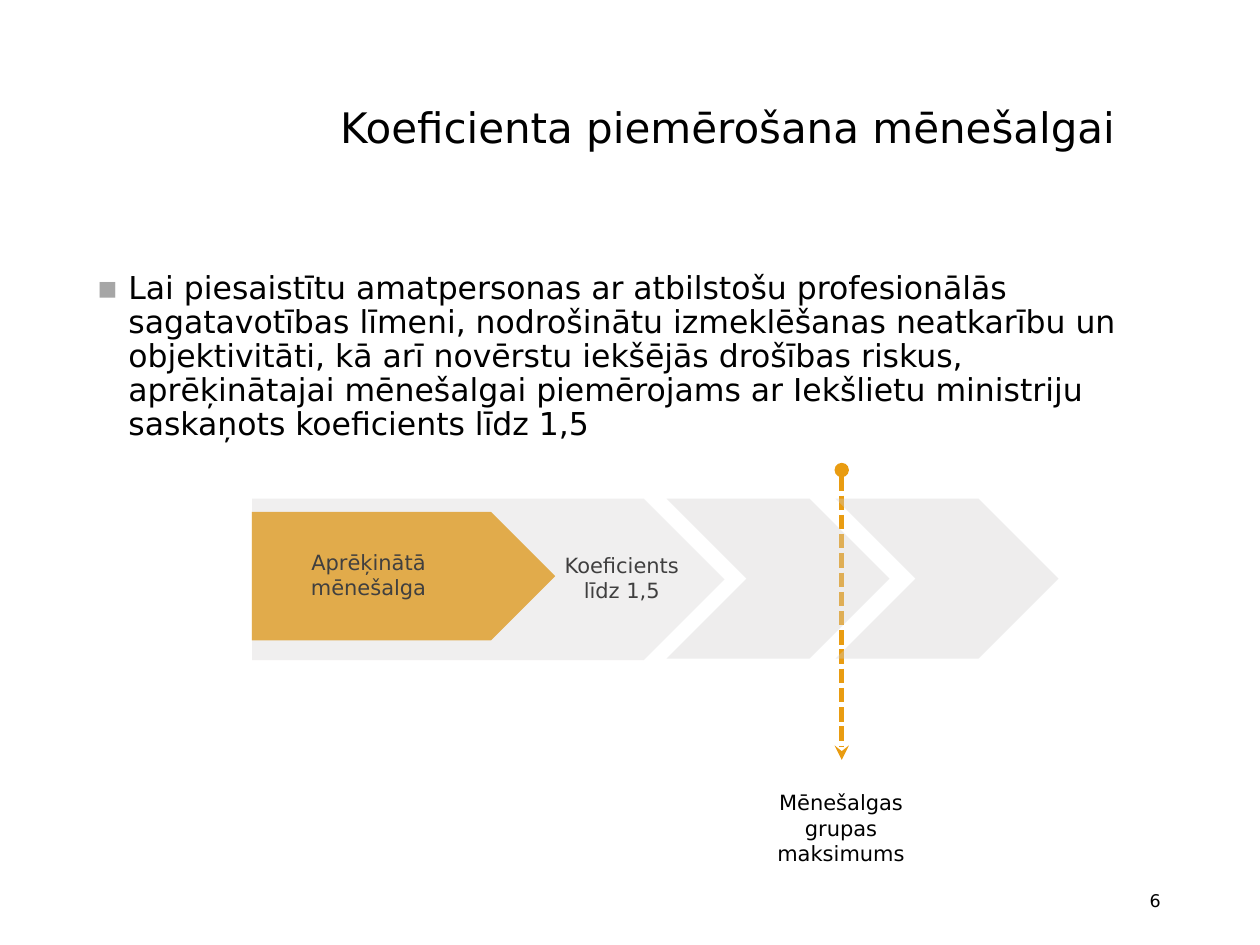
from lxml import etree
from pptx import Presentation
from pptx import util as u
from pptx.dml import color as c
from pptx.enum import dml, shapes, text
from pptx.oxml import ns

COLORS = {"ink": "000000", "amber": "E99C11", "grey": "D0CECE", "bullet": "A6A6A6"}


def apply(target, values):
    for name, value in values.items():
        setattr(target, name, value)


def add_element(parent, tag, **attributes):
    return etree.SubElement(parent, ns.qn(tag), attributes)


class SlideStyle:
    font = "DejaVu Sans"

    def __init__(self, slide):
        self.slide = slide

    def color(self, name):
        return c.RGBColor.from_string(COLORS[name])

    def place(self, box, left, top, width, height):
        apply(box, {"left": u.Pt(left), "top": u.Pt(top),
                    "width": u.Pt(width), "height": u.Pt(height)})

    def fill_text(self, box, words, size, frame, layout, bullet=None):
        apply(box.text_frame, {"word_wrap": True, **frame})
        para = box.text_frame.paragraphs[0]
        if bullet:
            props = para._p.get_or_add_pPr()
            props.set("marL", str(u.Pt(18)))
            props.set("indent", str(u.Pt(-18)))
            tint = add_element(props, "a:buClr")
            add_element(tint, "a:srgbClr", val=COLORS["bullet"])
            add_element(props, "a:buFont", typeface=self.font)
            add_element(props, "a:buChar", char=bullet)
        apply(para, {"space_before": u.Pt(0), **layout})
        span = para.add_run()
        span.text = words
        apply(span.font, {"name": self.font, "size": u.Pt(size)})
        span.font.color.rgb = self.color("ink")

    def placeholder(self, index, area, words, size, anchor, bullet=None):
        box = self.slide.placeholders[index]
        self.place(box, *area)
        frame = {"vertical_anchor": anchor, "auto_size": text.MSO_AUTO_SIZE.NONE}
        layout = {"alignment": text.PP_ALIGN.LEFT, "line_spacing": 0.9}
        self.fill_text(box, words, size, frame, layout, bullet)

    def label(self, area, words):
        box = self.slide.shapes.add_textbox(*map(u.Pt, area))
        self.fill_text(box, words, 12, {"auto_size": text.MSO_AUTO_SIZE.SHAPE_TO_FIT_TEXT},
                       {"alignment": text.PP_ALIGN.CENTER})

    def page_number(self, area, words):
        box = self.slide.shapes.add_textbox(*map(u.Pt, area))
        self.fill_text(box, words, 10, {"vertical_anchor": text.MSO_ANCHOR.MIDDLE},
                       {"alignment": text.PP_ALIGN.RIGHT})

    def block(self, kind, area, fill, opacity=100):
        block = self.slide.shapes.add_shape(kind, *map(u.Pt, area))
        block.shadow.inherit = False
        block.fill.solid()
        block.fill.fore_color.rgb = self.color(fill)
        block.line.fill.background()
        if opacity < 100:
            tint = block._element.spPr.find(".//" + ns.qn("a:srgbClr"))
            add_element(tint, "a:alpha", val=str(opacity * 1000))

    def marker(self, x, top, bottom):
        line = self.slide.shapes.add_connector(
            shapes.MSO_CONNECTOR.STRAIGHT, u.Pt(x), u.Pt(top), u.Pt(x), u.Pt(bottom))
        line.line.color.rgb = self.color("amber")
        apply(line.line, {"width": u.Pt(2.75), "dash_style": dml.MSO_LINE.SQUARE_DOT})
        stroke = line._element.spPr.find(ns.qn("a:ln"))
        add_element(stroke, "a:headEnd", type="oval")
        add_element(stroke, "a:tailEnd", type="stealth")
        add_element(line._element.spPr, "a:effectLst")


def main():
    deck = Presentation()
    apply(deck, {"slide_width": u.Pt(720), "slide_height": u.Pt(540)})
    page = SlideStyle(deck.slides.add_slide(deck.slide_layouts[1]))
    plate, chevron = shapes.MSO_SHAPE.PENTAGON, shapes.MSO_SHAPE.CHEVRON

    page.placeholder(0, (187.2, 31, 483.1, 86.4), "Koeficienta piemērošana mēnešalgai",
                     24, text.MSO_ANCHOR.MIDDLE)
    page.placeholder(
        1, (48.2, 151.9, 605.5, 111.6),
        "Lai piesaistītu amatpersonas ar atbilstošu profesionālās sagatavotības līmeni, "
        "nodrošinātu izmeklēšanas neatkarību un objektivitāti, kā arī novērstu iekšējās "
        "drošības riskus, aprēķinātajai mēnešalgai piemērojams ar Iekšlietu ministriju "
        "saskaņots koeficients līdz 1,5",
        18, text.MSO_ANCHOR.TOP, "▪")
    page.page_number((508.3, 500.4, 162, 28.8), "6")

    page.marker(481, 268.6, 434.2)
    page.label((432, 447.8, 97.2, 51.1), "Mēnešalgas grupas maksimums")
    page.block(plate, (144, 292.5, 173.3, 73.4), "amber")
    page.label((165.6, 310.3, 90, 36), "Aprēķinātā mēnešalga")
    page.label((310.3, 312.2, 90, 36), "Koeficients līdz 1,5")
    page.block(plate, (144, 285, 270, 92.2), "grey", 31)
    for left in (380.9, 477.5):
        page.block(chevron, (left, 285, 127.4, 91.4), "grey", 36)

    deck.save("out.pptx")


if __name__ == "__main__":
    main()
